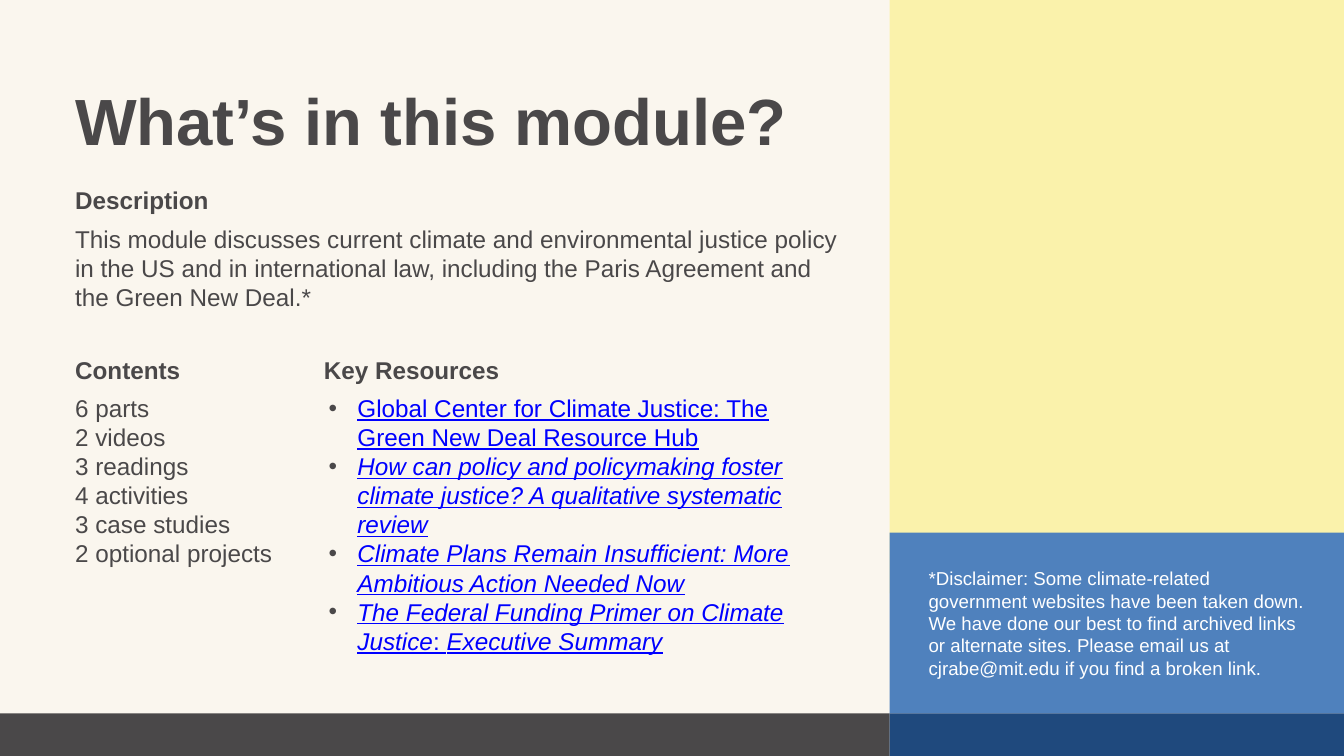
"""Build the module overview slide."""
from dataclasses import dataclass

from lxml.etree import SubElement
from pptx import Presentation
from pptx.dml.color import RGBColor
from pptx.enum.shapes import MSO_SHAPE as Kind
from pptx.enum.text import MSO_AUTO_SIZE as Fit
from pptx.oxml.ns import qn
from pptx.slide import Slide
from pptx.text.text import _Paragraph as Para
from pptx.util import Cm, Pt

WIDE, HIGH = 50.8, 28.58
LEFT, MID, SIDE = 2.84, 12.24, 33.63
FOOT = 26.97
INK, LINK, WHITE = "4A4849", "0000FF", "FFFFFF"


@dataclass(frozen=True)
class Panel:
    """A plain filled rectangle, in centimetres."""
    left: float
    top: float
    width: float
    height: float
    fill: str


@dataclass(frozen=True)
class Run:
    """A stretch of text in one slant."""
    text: str
    slant: bool = False


@dataclass(frozen=True)
class Block:
    """A text box, in centimetres, with one tuple of runs per paragraph."""
    left: float
    top: float
    width: float
    height: float
    lines: tuple[tuple[Run, ...], ...]
    size: int = 26
    tint: str = INK
    bold: bool = False
    links: bool = False


def plain(*texts: str) -> tuple[tuple[Run, ...], ...]:
    """Make one upright paragraph of each text."""
    return tuple((Run(text),) for text in texts)


PANELS = (
    Panel(0, FOOT, SIDE, HIGH - FOOT, INK),
    Panel(SIDE, 0, WIDE - SIDE, 22.43, "FAF2AB"),
    Panel(SIDE, 20.14, WIDE - SIDE, FOOT - 20.14, "4F81BD"),
    Panel(SIDE, FOOT, WIDE - SIDE, HIGH - FOOT, "1F497D"),
)

BLOCKS = (
    Block(LEFT, 3.05, 29.18, 3, plain("What’s in this module?"), size=70, bold=True),
    Block(LEFT, 7.01, 28.98, 1.12, plain("Description"), bold=True),
    Block(LEFT, 8.46, 28.98, 3.33, plain(
        "This module discusses current climate and environmental justice policy "
        "in the US and in international law, including the Paris Agreement and "
        "the Green New Deal.*")),
    Block(LEFT, 13.44, 11.94, 1.12, plain("Contents"), bold=True),
    Block(LEFT, 14.86, 11.94, 6.68, plain(
        "6 parts", "2 videos", "3 readings", "4 activities",
        "3 case studies", "2 optional projects")),
    Block(MID, 13.44, 19.61, 1.12, plain("Key Resources"), bold=True),
    Block(MID, 14.86, 19.61, 10.01, (
        (Run("Global Center for Climate Justice: The Green New Deal Resource Hub"),),
        (Run("How can policy and policymaking foster climate justice? "
             "A qualitative systematic review", True),),
        (Run("Climate Plans Remain Insufficient: More Ambitious Action Needed Now", True),),
        (Run("The Federal Funding Primer on Climate Justice", True),
         Run(": "), Run("Executive Summary", True)),
    ), tint=LINK, links=True),
    Block(35.1, 21.44, 14.22, 4.27, plain(
        "*Disclaimer: Some climate-related government websites have been taken "
        "down. We have done our best to find archived links or alternate sites. "
        "Please email us at cjrabe@mit.edu if you find a broken link."),
        size=20, tint=WHITE),
)


def shade(code: str) -> RGBColor:
    """Turn a hex string into a colour."""
    return RGBColor.from_string(code)


def draw(slide: Slide, panel: Panel) -> None:
    """Draw a panel without outline or shadow."""
    shape = slide.shapes.add_shape(
        Kind.RECTANGLE, Cm(panel.left), Cm(panel.top), Cm(panel.width), Cm(panel.height))
    shape.shadow.inherit = False
    shape.fill.solid()
    shape.fill.fore_color.rgb = shade(panel.fill)
    shape.line.fill.background()


def mark(para: Para) -> None:
    """Give a paragraph a dark bullet and a hanging indent."""
    props = para._p.get_or_add_pPr()
    props.set("marL", str(Cm(1.27)))
    props.set("indent", str(-Cm(1.09)))
    SubElement(SubElement(props, qn("a:buClr")), qn("a:srgbClr"), val=INK)
    SubElement(props, qn("a:buFont"), typeface="Arial")
    SubElement(props, qn("a:buChar"), char="•")


def write(slide: Slide, block: Block) -> None:
    """Write a block of text into its own box."""
    box = slide.shapes.add_textbox(
        Cm(block.left), Cm(block.top), Cm(block.width), Cm(block.height))
    frame = box.text_frame
    frame.word_wrap = True
    frame.auto_size = Fit.SHAPE_TO_FIT_TEXT
    frame.margin_left = frame.margin_right = frame.margin_top = frame.margin_bottom = 0
    for num, runs in enumerate(block.lines):
        para = frame.add_paragraph() if num else frame.paragraphs[0]
        para.line_spacing = Pt(block.size * 1.2)
        if block.links:
            mark(para)
        font = para.font
        font.name, font.size, font.bold = "Arial", Pt(block.size), block.bold
        font.color.rgb = shade(block.tint)
        font.underline = block.links
        for part in runs:
            run = para.add_run()
            run.text = part.text
            if part.slant:
                run.font.italic = True


def main() -> None:
    """Build and save the slide."""
    deck = Presentation()
    deck.slide_width, deck.slide_height = Cm(WIDE), Cm(HIGH)
    slide = deck.slides.add_slide(deck.slide_layouts[6])
    slide.background.fill.solid()
    slide.background.fill.fore_color.rgb = shade("FAF6EE")
    for panel in PANELS:
        draw(slide, panel)
    for block in BLOCKS:
        write(slide, block)
    deck.save("out.pptx")


if __name__ == "__main__":
    main()
